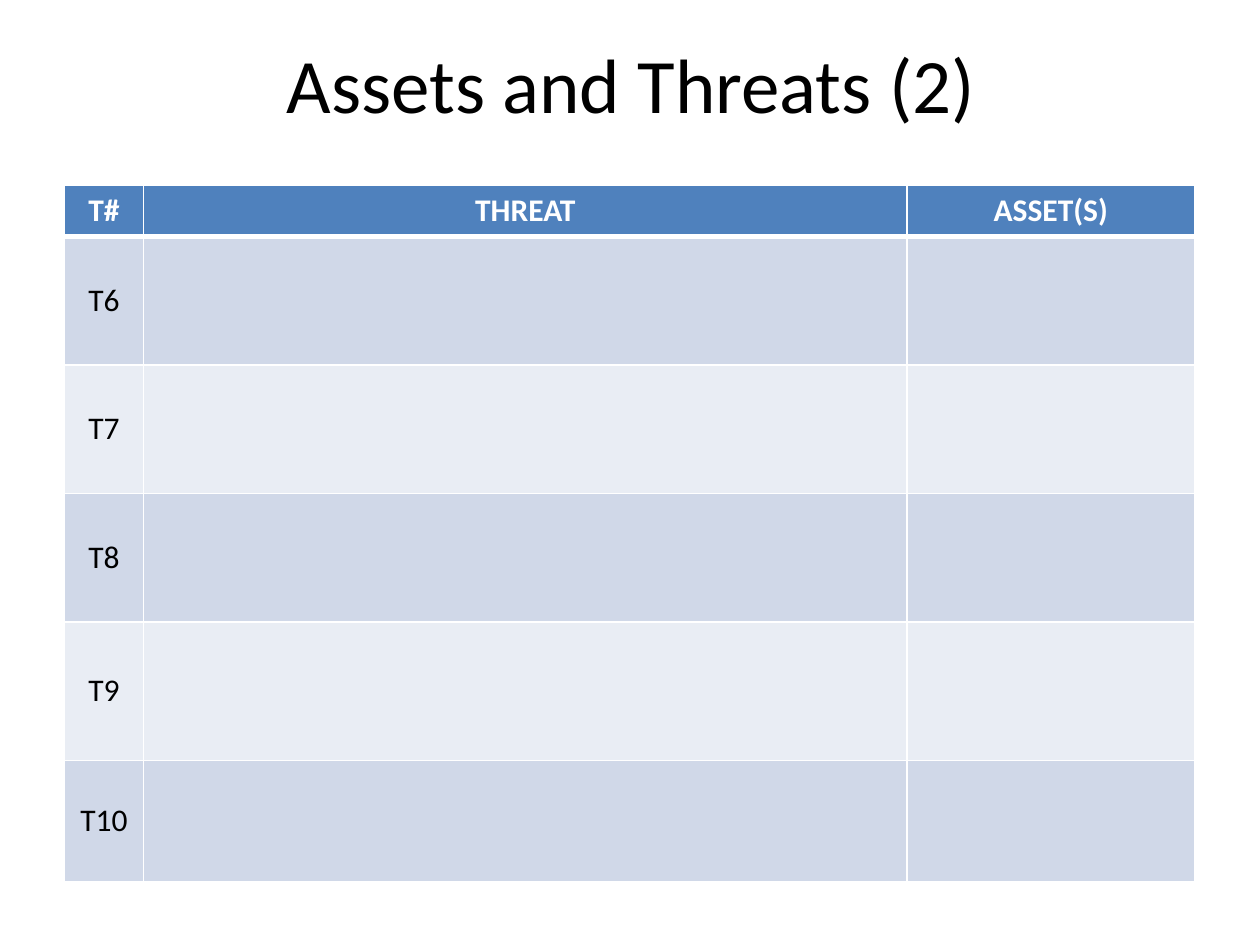
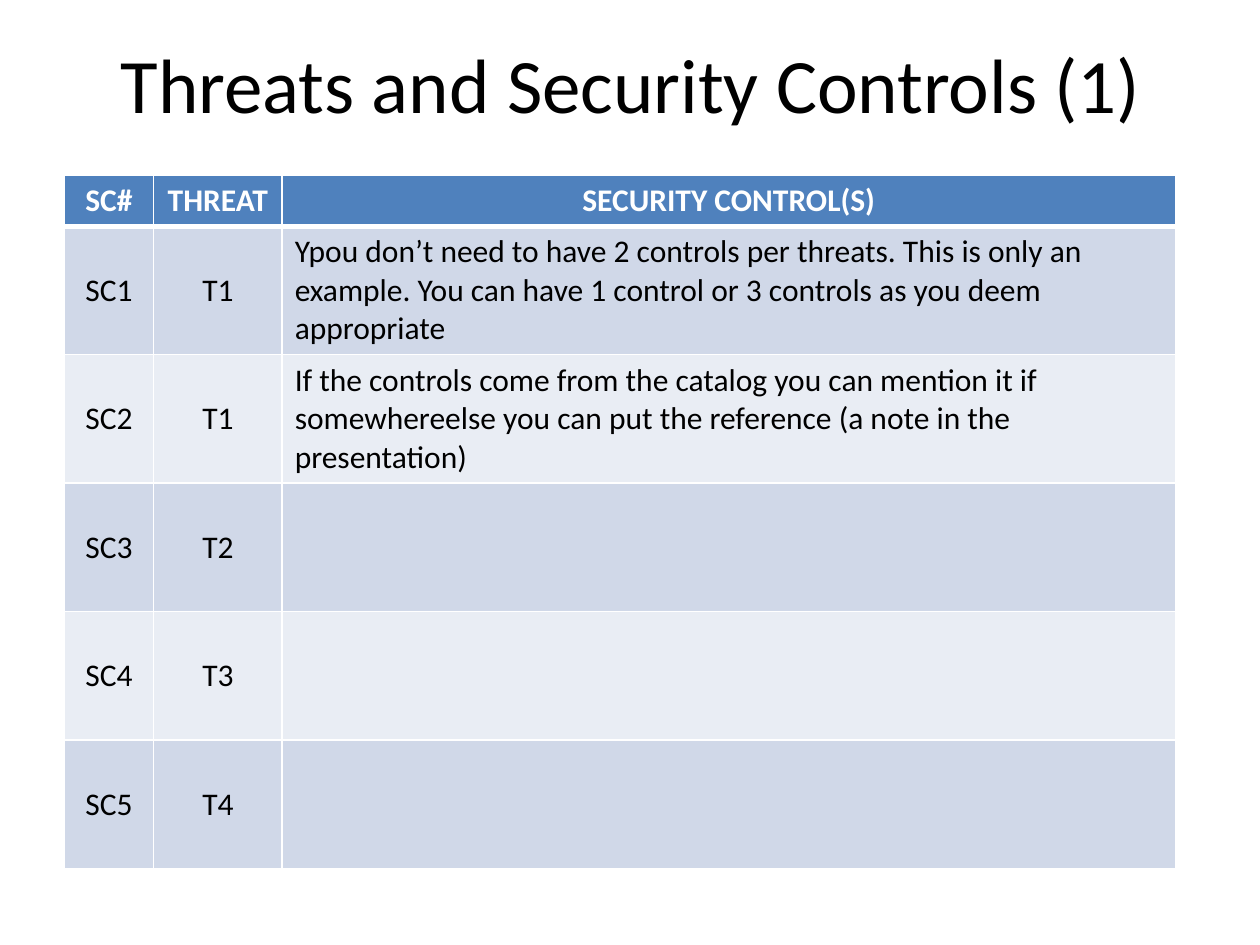
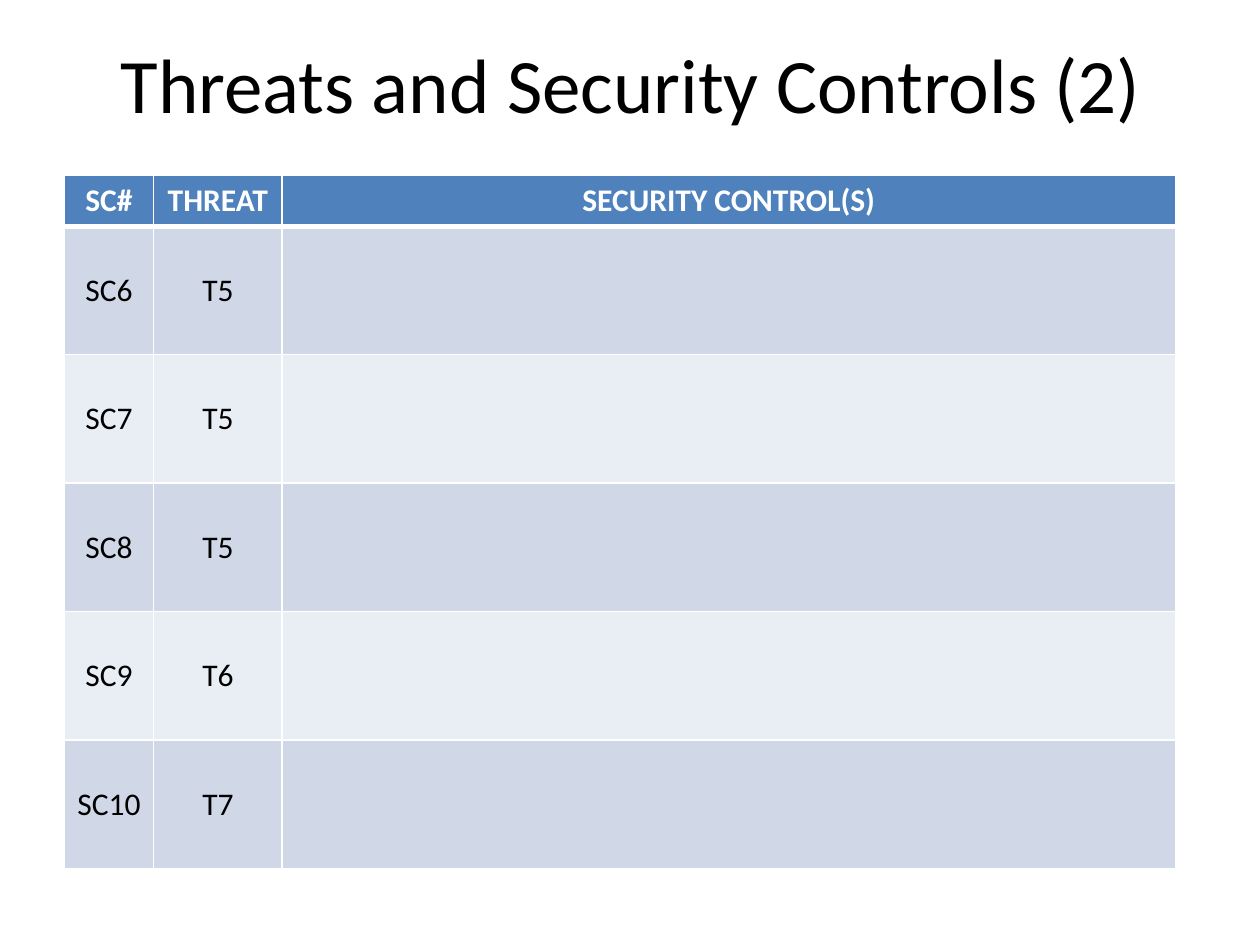
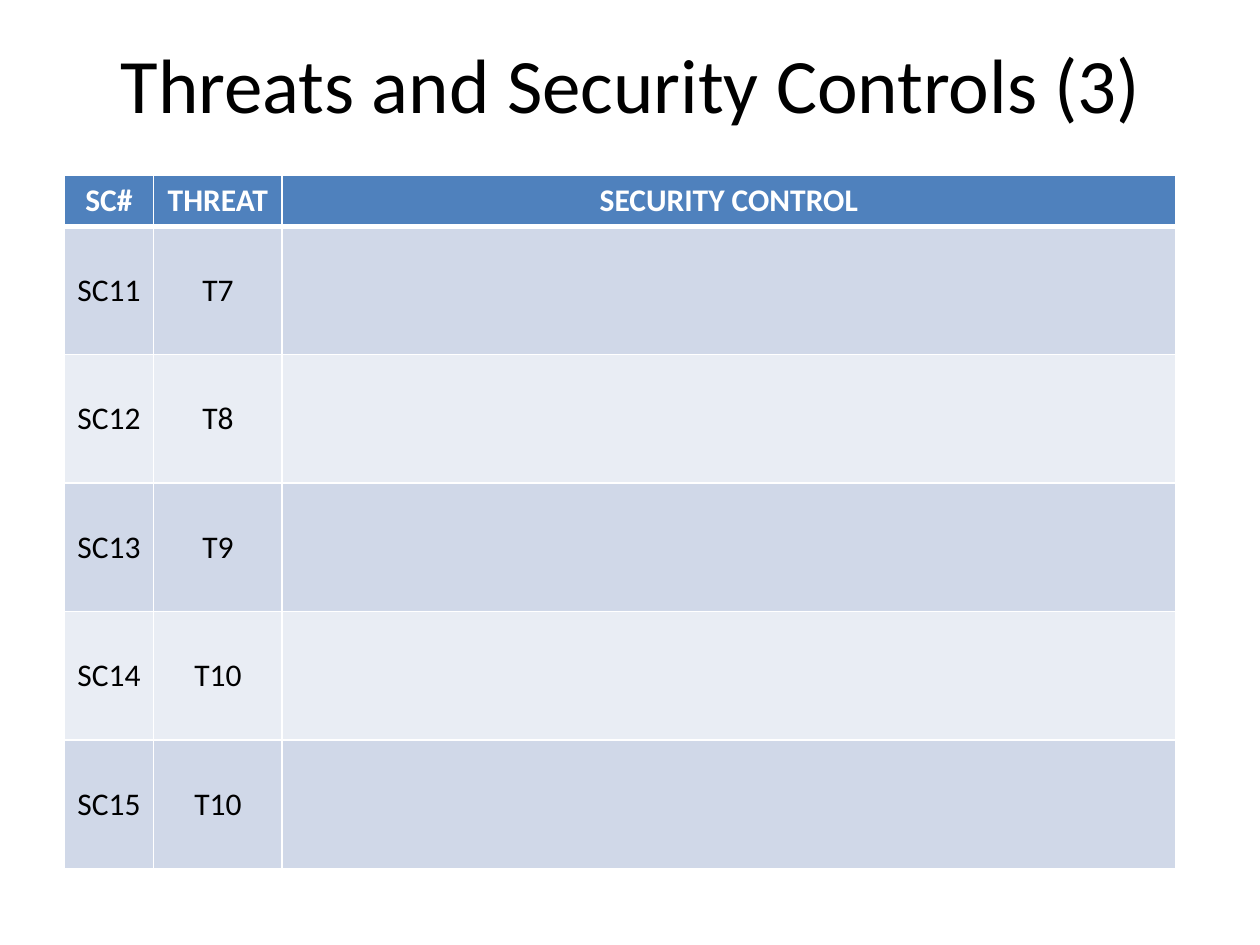
from lxml.etree import SubElement
from pptx import Presentation
from pptx.dml.color import RGBColor
from pptx.enum.text import MSO_ANCHOR, PP_ALIGN
from pptx.oxml.ns import qn
from pptx.util import Inches, Pt

COLORS = {
    "background": "FFFFFF",
    "title": "000000",
    "header": "4F81BD",
    "header_text": "FFFFFF",
    "band_dark": "D0D8E8",
    "band_light": "E9EDF4",
    "body_text": "000000",
    "border": "FFFFFF",
}
FONT = "Calibri"
TITLE_SIZE, TABLE_SIZE = 44, 18
THIN, THICK = 1, 3

# Lengths are percentages of the slide width or height
LEFT = 5.1
HEADER_HEIGHT, ROW_HEIGHT = 5.2, 13.6


class Deck:
    """Holds the shared style and the current slide."""

    def __init__(self):
        self.prs = Presentation()
        self.prs.slide_width, self.prs.slide_height = Inches(10), Inches(7.5)
        self.slide = None

    def x(self, percent):
        return round(self.prs.slide_width * percent / 100)

    def y(self, percent):
        return round(self.prs.slide_height * percent / 100)

    def color(self, name):
        return RGBColor.from_string(COLORS[name])

    def add_slide(self, title):
        self.slide = self.prs.slides.add_slide(self.prs.slide_layouts[5])
        fill = self.slide.background.fill
        fill.solid()
        fill.fore_color.rgb = self.color("background")
        sp = self.slide.shapes.title
        sp.left, sp.top = self.x(LEFT), self.y(0.4)
        sp.width, sp.height = self.x(90), self.y(16.67)
        tf = sp.text_frame
        tf.vertical_anchor = MSO_ANCHOR.MIDDLE
        self.set_text(tf, title, TITLE_SIZE, "title")

    def set_text(self, tf, text, size, color, bold=False,
                 align=PP_ALIGN.CENTER):
        tf.text = text
        p = tf.paragraphs[0]
        p.alignment = align
        p.font.size = Pt(size)
        for r in p.runs:
            r.font.name, r.font.size, r.font.bold = FONT, Pt(size), bold
            r.font.color.rgb = self.color(color)

    def add_table(self, top, widths, heights, rows):
        """Add a banded table; body text in the last column is left-aligned."""
        frame = self.slide.shapes.add_table(
            len(rows), len(widths), self.x(LEFT), self.y(top),
            self.x(sum(widths)), self.y(sum(heights)))
        table = frame.table
        table.horz_banding = False
        for column, width in zip(table.columns, widths):
            column.width = self.x(width)
        for i, (row, height) in enumerate(zip(rows, heights)):
            table.rows[i].height = self.y(height)
            for j, text in enumerate(row):
                wide = i > 0 and j == len(widths) - 1
                self.style_cell(table.cell(i, j), i, text,
                                PP_ALIGN.LEFT if wide else PP_ALIGN.CENTER)

    def style_cell(self, cell, row, text, align):
        header = row == 0
        band = "band_dark" if row % 2 else "band_light"
        cell.vertical_anchor = MSO_ANCHOR.MIDDLE
        self.set_text(cell.text_frame, text, TABLE_SIZE,
                      "header_text" if header else "body_text", header, align)
        # Borders come before the fill in the cell properties
        self.add_border(cell, "a:lnL", THIN)
        self.add_border(cell, "a:lnR", THIN)
        self.add_border(cell, "a:lnT", THICK if row == 1 else THIN)
        self.add_border(cell, "a:lnB", THICK if header else THIN)
        cell.fill.solid()
        cell.fill.fore_color.rgb = self.color("header" if header else band)

    def add_border(self, cell, tag, width):
        properties = cell._tc.get_or_add_tcPr()
        line = SubElement(properties, qn(tag), w=str(int(Pt(width))))
        fill = SubElement(line, qn("a:solidFill"))
        SubElement(fill, qn("a:srgbClr"), val=COLORS["border"])


def add_threats(deck):
    deck.add_slide("Assets and Threats (2)")
    rows = [("T#", "THREAT", "ASSET(S)")]
    rows += [(f"T{n}", "", "") for n in range(6, 11)]
    heights = [HEADER_HEIGHT] + [ROW_HEIGHT] * 3 + [14.67, 12.8]
    deck.add_table(19.6, [6.3, 60.6, 22.8], heights, rows)


def add_controls(deck, part, heading, threats, notes=()):
    """Add one part of the control list, numbered on from the part before."""
    deck.add_slide(f"Threats and Security Controls ({part})")
    first = (part - 1) * len(threats) + 1
    rows = [("SC#", "THREAT", heading)]
    for i, threat in enumerate(threats):
        note = notes[i] if i < len(notes) else ""
        rows.append((f"SC{first + i}", f"T{threat}", note))
    heights = [HEADER_HEIGHT] + [ROW_HEIGHT] * len(threats)
    deck.add_table(18.53, [7.1, 10.2, 70.9], heights, rows)


def main():
    deck = Deck()
    add_threats(deck)
    add_controls(deck, 1, "SECURITY CONTROL(S)", [1, 1, 2, 3, 4], [
        "Ypou don’t need to have 2 controls per threats. This is only an "
        "example. You can have 1 control or 3 controls as you deem appropriate",
        "If the controls come from the catalog you can mention it if "
        "somewhereelse you can put the reference (a note in the presentation)",
    ])
    add_controls(deck, 2, "SECURITY CONTROL(S)", [5, 5, 5, 6, 7])
    add_controls(deck, 3, "SECURITY CONTROL", [7, 8, 9, 10, 10])
    deck.prs.save("out.pptx")


if __name__ == "__main__":
    main()
